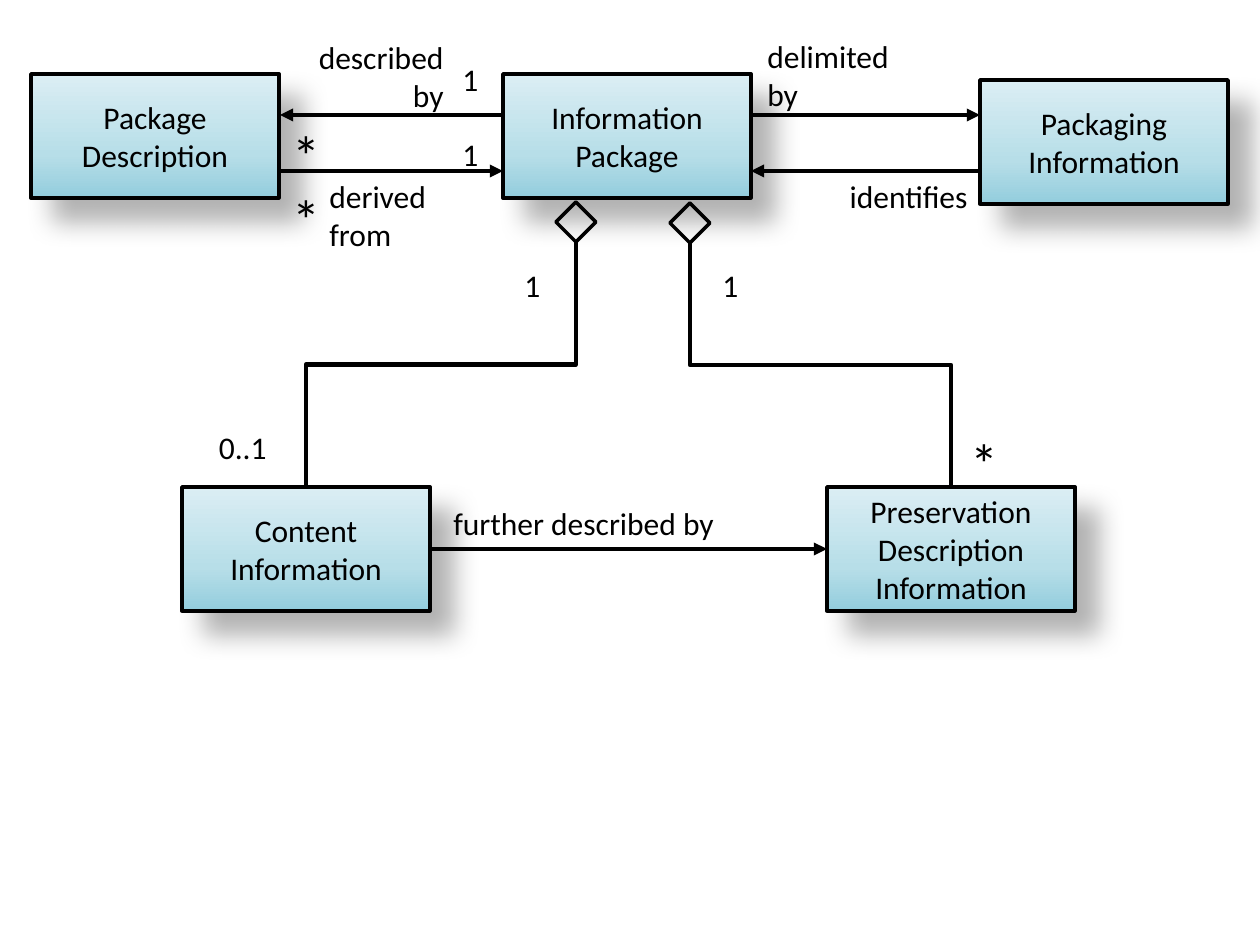
import pptx
import pptx.dml.color
import pptx.enum.shapes
import pptx.enum.text
import pptx.oxml
import pptx.oxml.ns
import pptx.util
from lxml import etree

EMU_PER_PX = 914400 / 126
COLORS = {"ink": "000000", "deep": "93CDDD", "mid": "B7DEE8", "pale": "DBEEF4"}
BOX_W, BOX_H = 248, 124
SHAPES = pptx.enum.shapes.MSO_SHAPE
LINES = pptx.enum.shapes.MSO_CONNECTOR
ALIGN = pptx.enum.text.PP_ALIGN
TOP, LEFT, BOTTOM, RIGHT = range(4)


def px(value):
    return pptx.util.Emu(round(value * EMU_PER_PX))


def color(name):
    return pptx.dml.color.RGBColor.from_string(COLORS[name])


def xml(tag, body):
    namespace = pptx.oxml.ns.nsdecls("a")
    return pptx.oxml.parse_xml(f"<a:{tag} {namespace}>{body}</a:{tag}>")


class Diagram:
    font = "Calibri"
    text_size = 18
    outline = 2
    link_width = 2.5

    def __init__(self, slide):
        self.slide = slide

    def set_text(self, frame, text, align, size=text_size):
        frame.word_wrap = True
        frame.text = text
        for paragraph in frame.paragraphs:
            paragraph.alignment = align
            for run in paragraph.runs:
                run.font.name = self.font
                run.font.size = pptx.util.Pt(size)
                run.font.color.rgb = color("ink")

    def outlined(self, kind, x, y, w, h):
        shape = self.slide.shapes.add_shape(kind, px(x), px(y), px(w), px(h))
        shape.shadow.inherit = False
        shape.fill.background()
        shape.line.color.rgb = color("ink")
        shape.line.width = pptx.util.Pt(self.outline)
        return shape

    def box(self, text, x, y):
        shape = self.outlined(SHAPES.RECTANGLE, x, y, BOX_W, BOX_H)
        shape.text_frame.vertical_anchor = pptx.enum.text.MSO_ANCHOR.MIDDLE
        self.set_text(shape.text_frame, text, ALIGN.CENTER)
        # Three-stop gradient, dark at the bottom
        stops = "".join(
            f'<a:gs pos="{pos}"><a:srgbClr val="{COLORS[name]}"/></a:gs>'
            for pos, name in ((0, "deep"), (35000, "mid"), (100000, "pale")))
        properties = shape._element.spPr
        properties.replace(
            properties.find(pptx.oxml.ns.qn("a:noFill")),
            xml("gradFill", f'<a:gsLst>{stops}</a:gsLst><a:lin ang="16200000" scaled="0"/>'))
        # Soft shadow to the lower right
        blur, distance = pptx.util.Pt(15), pptx.util.Pt(18)
        properties.replace(
            properties.find(pptx.oxml.ns.qn("a:effectLst")),
            xml("effectLst",
                f'<a:outerShdw blurRad="{blur}" dist="{distance}" dir="2700000" '
                f'algn="tl" rotWithShape="0"><a:srgbClr val="{COLORS["ink"]}">'
                '<a:alpha val="30000"/></a:srgbClr></a:outerShdw>'))
        return shape

    def diamond(self, x, y):
        return self.outlined(SHAPES.DIAMOND, x, y, 40, 40)

    def connector(self, kind, x1=0, y1=0, x2=0, y2=0):
        line = self.slide.shapes.add_connector(kind, px(x1), px(y1), px(x2), px(y2))
        line.line.color.rgb = color("ink")
        line.line.width = pptx.util.Pt(self.link_width)
        etree.SubElement(line._element.spPr, pptx.oxml.ns.qn("a:effectLst"))
        return line

    def arrow(self, x1=0, y1=0, x2=0, y2=0):
        line = self.connector(LINES.STRAIGHT, x1, y1, x2, y2)
        etree.SubElement(line._element.spPr.find(pptx.oxml.ns.qn("a:ln")),
                         pptx.oxml.ns.qn("a:tailEnd"), type="triangle")
        return line

    def aggregation(self, diamond, part):
        """Elbow that leaves the diamond downwards and enters the part from above."""
        elbow = self.connector(LINES.ELBOW)
        elbow.begin_connect(diamond, BOTTOM)
        elbow.end_connect(part, TOP)
        x1, y1 = diamond.left + diamond.width // 2, diamond.top + diamond.height
        x2, y2 = part.left + part.width // 2, part.top
        drop, reach = y2 - y1, abs(x2 - x1)
        # The frame is turned a quarter, so its width is the drop
        elbow.left, elbow.top = (x1 + x2 - drop) // 2, (y1 + y2 - reach) // 2
        elbow.width, elbow.height = drop, reach
        frame = elbow._element.spPr.find(pptx.oxml.ns.qn("a:xfrm"))
        for flip in ("flipH", "flipV"):
            frame.attrib.pop(flip, None)
        if x2 > x1:
            frame.set("rot", "16200000")
            frame.set("flipH", "1")
        else:
            frame.set("rot", "5400000")

    def label(self, text, x, y, w, h, align=ALIGN.LEFT, size=text_size, top_inset=6):
        frame = self.slide.shapes.add_textbox(px(x), px(y), px(w), px(h)).text_frame
        frame.margin_top = px(top_inset)
        self.set_text(frame, text, align, size)

    def one(self, x, y):
        self.label("1", x, y, 45, 50)

    def many(self, x, y):
        self.label("*", x, y, 45, 81, size=32)


def main():
    deck = pptx.Presentation()
    deck.slide_width, deck.slide_height = px(1260), px(945)
    diagram = Diagram(deck.slides.add_slide(deck.slide_layouts[6]))

    # Content and preservation information below the package
    diagram.box("Information Package", 503, 74)
    preservation = diagram.box("Preservation Description\nInformation", 827, 487)
    content = diagram.box("Content Information", 182, 487)
    diagram.aggregation(diagram.diamond(670, 203), preservation)
    diagram.aggregation(diagram.diamond(556, 202), content)
    further = diagram.arrow()
    further.begin_connect(content, RIGHT)
    further.end_connect(preservation, LEFT)
    diagram.label("further described by", 441, 498, 316, 50)

    # Description and packaging beside the package
    diagram.box("Package Description", 31, 74)
    diagram.box("Packaging Information", 980, 80)
    diagram.arrow(280, 171, 503, 171)
    diagram.arrow(503, 115, 280, 115)
    diagram.label("derived\nfrom", 317, 171, 130, 89)
    diagram.label("described\nby", 306, 38, 150, 83, ALIGN.RIGHT, top_inset=0)
    diagram.arrow(751, 115, 980, 115)
    diagram.arrow(980, 171, 751, 171)
    diagram.label("delimited\nby", 755, 37, 225, 83, top_inset=0)
    diagram.label("identifies", 751, 171, 229, 50, ALIGN.RIGHT)

    # Multiplicities
    for x, y in ((710, 260), (512, 260), (450, 129), (450, 54)):
        diagram.one(x, y)
    for x, y in ((958, 422), (280, 179), (280, 115)):
        diagram.many(x, y)
    diagram.label("0..1", 182, 422, 97, 50, ALIGN.RIGHT)

    deck.save("out.pptx")


if __name__ == "__main__":
    main()
